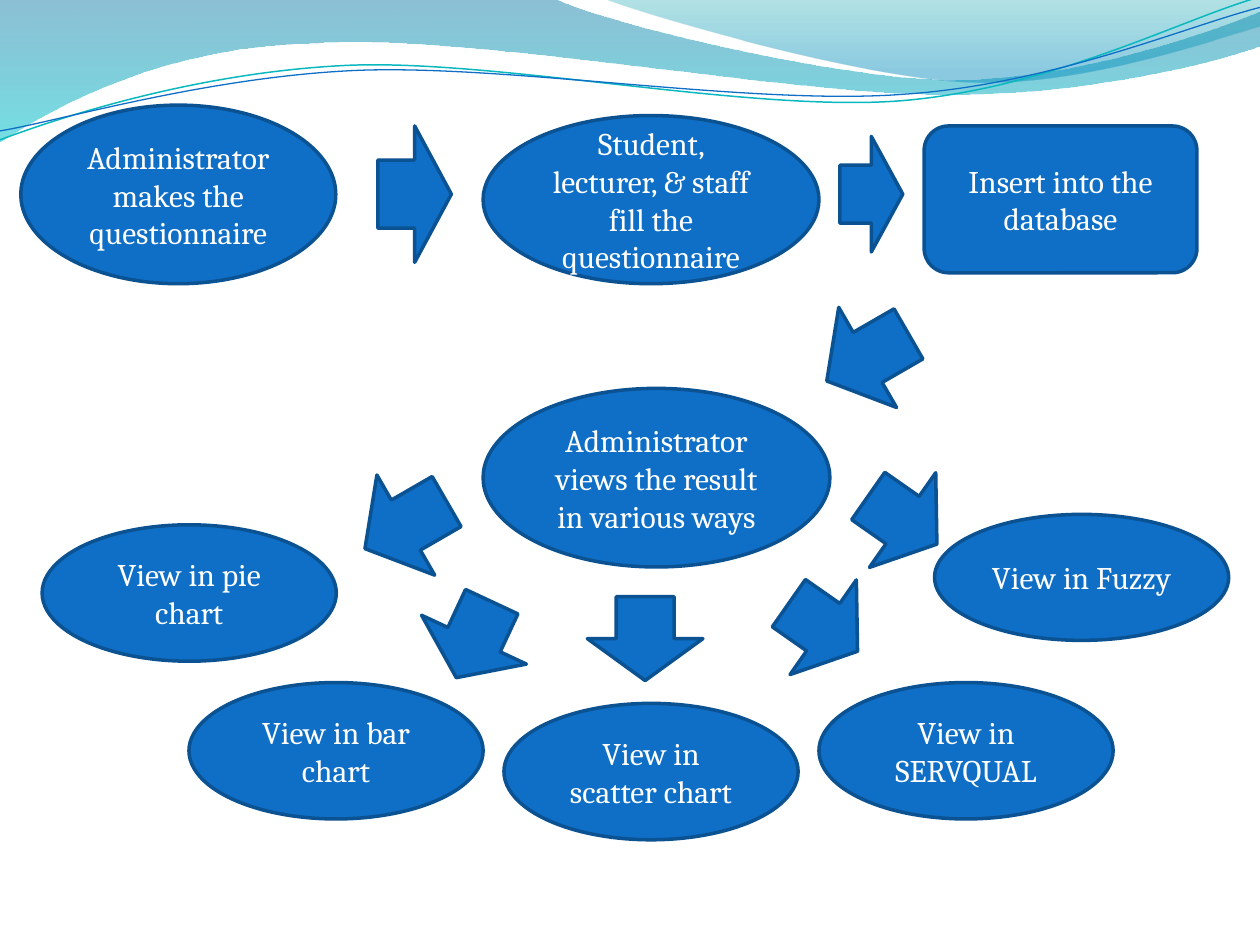
"""Build the questionnaire flow slide."""
from lxml.etree import SubElement
from pptx import Presentation
from pptx.dml.color import RGBColor
from pptx.enum.shapes import MSO_SHAPE as Kind
from pptx.enum.text import MSO_ANCHOR as Anchor, PP_ALIGN as Align
from pptx.oxml.ns import qn
from pptx.util import Cm, Pt


def paint(color, code):
    color.rgb = RGBColor.from_string(code)


def trace(start, steps, close):
    pts = [pair for step in steps for pair in zip(step[::2], step[1::2])]
    pen = shapes.build_freeform(Cm(start[0]), Cm(start[1]))
    pen.add_line_segments([(Cm(x), Cm(y)) for x, y in pts], close=close)
    shape = pen.convert_to_shape()
    shape.shadow.inherit = False
    legs = iter(list(shape.element.iter(qn("a:lnTo"))))
    for step in steps:
        leg = next(legs)
        if len(step) == 6:
            curve = leg.makeelement(qn("a:cubicBezTo"))
            leg.addprevious(curve)
            for part in (leg, next(legs), next(legs)):
                curve.append(part[0])
                part.getparent().remove(part)
    return shape


deck = Presentation()
deck.slide_width, deck.slide_height = Cm(25.4), Cm(19.05)
slide = deck.slides.add_slide(deck.slide_layouts[6])
shapes = slide.shapes
font = {"name": "Cambria", "size": Pt(18)}
frame = {"word_wrap": True, "vertical_anchor": Anchor.MIDDLE}

bands = [
    ((0, 0),
     [(11.18, -0.03), (12.09, 0.43, 16.87, 1.6, 19.25, 1.6),
      (21.67, 1.6, 24.33, 0.66, 25.4, 0.23), (25.43, 0.91),
      (24.97, 1.12, 22.1, 1.93, 18.95, 1.9), (15.8, 1.9, 9.7, 0.71, 6.53, 0.86),
      (3.28, 0.91, 1.17, 2.11, -0.03, 2.87), (0, 0)],
     [(0, "0074A1", 45), (1, "00C6CF", 55)]),
    ((12.17, -0.03),
     [(12.93, 0.28, 17.32, 1.57, 19.53, 1.65),
      (21.74, 1.75, 24.41, 0.81, 25.4, 0.53), (25.4, 0), (12.17, -0.03)],
     [(0, "00A1A9", 30), (0.8, "008BBF", 45)]),
]
for start, steps, stops in bands:
    band = trace(start, steps, True)
    band.line.fill.background()
    band.fill.gradient()
    band.fill.gradient_angle = 270
    for stop, (place, code, alpha) in zip(band.fill.gradient_stops, stops):
        stop.position = place
        paint(stop.color, code)
    tints = band.element.spPr.iter(qn("a:srgbClr"))
    for tint, (place, code, alpha) in zip(list(tints), stops):
        SubElement(tint, qn("a:alpha"), val=str(alpha * 1000))

waves = [
    ((-0.05, 2.22),
     [(1.19, 1.82, 4.02, 1.04, 7.05, 1.05), (10.05, 1.07, 15.02, 2.37, 18.08, 2.29),
      (21.13, 2.2, 23.87, 0.91, 25.41, 0.55)], "0AB8BF", 0.85),
    ((-0.04, 2.04),
     [(1.16, 1.9, 4.18, 1.15, 7.2, 1.16), (10.25, 1.18, 15.13, 2.25, 18.19, 2.16),
      (21.21, 2.1, 23.93, 1.06, 25.45, 0.75)], "0F6FC6", 0.75),
]
for start, steps, code, width in waves:
    wave = trace(start, steps, False)
    wave.rotation = 357.3
    wave.fill.background()
    paint(wave.line.color, code)
    wave.line.width = Pt(width)

oval, box, arrow = Kind.OVAL, Kind.ROUNDED_RECTANGLE, Kind.RIGHT_ARROW
items = [
    (oval, 0.42, 2.12, 6.35, 3.6, 0, "Administrator makes the questionnaire"),
    (oval, 9.74, 2.33, 6.77, 3.39, 0, "Student, lecturer, & staff fill the questionnaire"),
    (arrow, 7.62, 2.54, 1.48, 2.75, 0, ""),
    (box, 18.63, 2.54, 5.5, 2.96, 0, "Insert into the database"),
    (oval, 9.74, 7.83, 6.99, 3.6, 0, "Administrator views the result in various ways"),
    (arrow, 16.93, 2.75, 1.27, 2.33, 0, ""),
    (arrow, 7.23, 9.42, 1.9, 2.33, 150, ""),
    (oval, 0.85, 10.58, 5.93, 2.75, 0, "View in pie chart"),
    (oval, 3.81, 13.76, 5.93, 2.75, 0, "View in bar chart"),
    (oval, 10.16, 14.18, 5.93, 2.75, 0, "View in scatter chart"),
    (oval, 16.51, 13.76, 5.93, 2.75, 0, "View in SERVQUAL"),
    (oval, 18.84, 10.37, 5.93, 2.54, 0, "View in Fuzzy"),
    (arrow, 17.35, 9.32, 1.69, 2.33, 35, ""),
    (arrow, 8.71, 11.73, 1.69, 2.33, 115, ""),
    (arrow, 12.16, 11.71, 1.69, 2.33, 90, ""),
    (arrow, 15.75, 11.48, 1.69, 2.33, 35, ""),
    (arrow, 16.54, 6.04, 1.9, 2.33, 150, ""),
]
for kind, left, top, width, height, turn, words in items:
    item = shapes.add_shape(kind, Cm(left), Cm(top), Cm(width), Cm(height))
    item.shadow.inherit = False
    item.rotation = turn
    item.fill.solid()
    paint(item.fill.fore_color, "0F6FC6")
    paint(item.line.color, "0B5292")
    item.line.width = Pt(2)
    if words:
        for key, value in frame.items():
            setattr(item.text_frame, key, value)
        para = item.text_frame.paragraphs[0]
        para.alignment = Align.CENTER
        run = para.add_run()
        run.text = words
        for key, value in font.items():
            setattr(run.font, key, value)
        paint(run.font.color, "FFFFFF")

deck.save("out.pptx")
